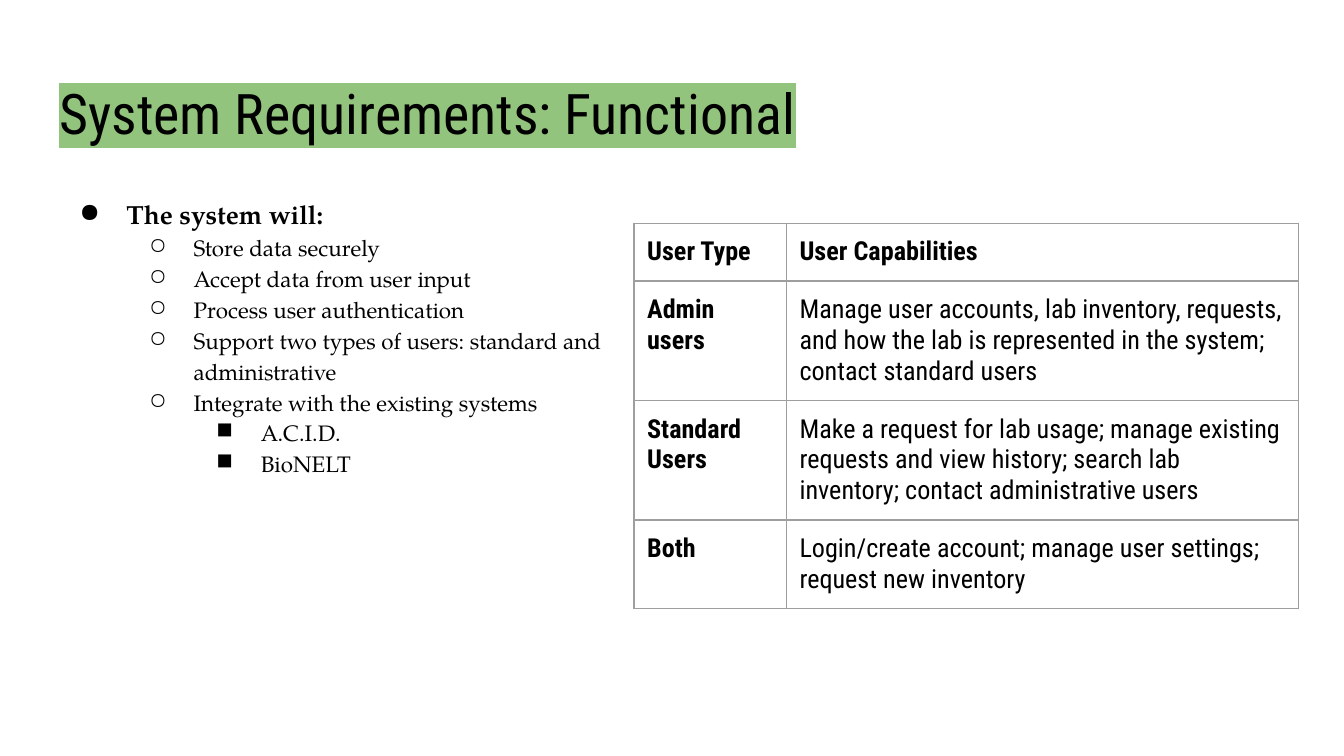
from lxml.etree import SubElement
from pptx import Presentation
from pptx.dml.color import RGBColor
from pptx.enum.text import MSO_ANCHOR, MSO_AUTO_SIZE, PP_ALIGN
from pptx.oxml.ns import qn
from pptx.util import Cm, Pt

SANS, SERIF = "Roboto Condensed", "TeX Gyre Pagella"
BLACK, GREEN, GRAY, WHITE = "000000", "93C47D", "9E9E9E", "FFFFFF"
BULLETS = "●○■"
REQUIREMENTS = [
    (0, "The system will:"),
    (1, "Store data securely"),
    (1, "Accept data from user input"),
    (1, "Process user authentication"),
    (1, "Support two types of users: standard and administrative"),
    (1, "Integrate with the existing systems"),
    (2, "A.C.I.D."),
    (2, "BioNELT"),
]
CAPABILITIES = [
    ("User Type", "User Capabilities"),
    ("Admin users", "Manage user accounts, lab inventory, requests, and how the lab "
     "is represented in the system; contact standard users"),
    ("Standard Users", "Make a request for lab usage; manage existing requests and view "
     "history; search lab inventory; contact administrative users"),
    ("Both", "Login/create account; manage user settings; request new inventory"),
]


def rgb(value):
    return RGBColor.from_string(value)


def solid(parent, value):
    fill = SubElement(parent, qn("a:solidFill"))
    SubElement(fill, qn("a:srgbClr"), val=value)


class Deck:
    """Holds the text style and the current slide."""

    def __init__(self, prs):
        self.color = BLACK
        self.inset = Cm(0.25)
        self.s = prs.slides.add_slide(prs.slide_layouts[5])
        self.s.background.fill.solid()
        self.s.background.fill.fore_color.rgb = rgb(WHITE)

    def run(self, p, text, font, size, bold=False):
        r = p.add_run()
        r.text = text
        r.font.name, r.font.size, r.font.bold = font, Pt(size), bold
        r.font.color.rgb = rgb(self.color)
        return r

    def frame(self, tf):
        tf.word_wrap = True
        tf.auto_size = MSO_AUTO_SIZE.NONE
        tf.vertical_anchor = MSO_ANCHOR.TOP
        tf.margin_left = tf.margin_right = self.inset
        tf.margin_top = tf.margin_bottom = self.inset
        return tf

    def title(self, text, x, y, w, h, highlight):
        sp = self.s.shapes.title
        sp.left, sp.top, sp.width, sp.height = Cm(x), Cm(y), Cm(w), Cm(h)
        p = self.frame(sp.text_frame).paragraphs[0]
        p.alignment = PP_ALIGN.LEFT
        rPr = self.run(p, text, SANS, 30).font._element
        mark = SubElement(rPr, qn("a:highlight"))
        SubElement(mark, qn("a:srgbClr"), val=highlight)
        rPr.find(qn("a:latin")).addprevious(mark)

    def bullets(self, items, x, y, w, h):
        sp = self.s.shapes.add_textbox(Cm(x), Cm(y), Cm(w), Cm(h))
        tf = self.frame(sp.text_frame)
        for i, (level, text) in enumerate(items):
            p = tf.add_paragraph() if i else tf.paragraphs[0]
            p.level = level
            p.line_spacing = 1.15
            pPr = p._p.get_or_add_pPr()
            pPr.set("marL", str(Cm(1.27 * (level + 1))))
            pPr.set("indent", str(-Cm(0.84 if level else 0.89)))
            color = SubElement(pPr, qn("a:buClr"))
            SubElement(color, qn("a:srgbClr"), val=self.color)
            SubElement(pPr, qn("a:buChar"), char=BULLETS[level])
            self.run(p, text, SERIF, 12 if level else 14, level == 0)

    def table(self, rows, x, y, widths, heights):
        shape = self.s.shapes.add_table(len(rows), len(widths), Cm(x), Cm(y),
                                        Cm(sum(widths)), Cm(sum(heights)))
        table = shape.table
        table.first_row = table.horz_banding = False
        for column, width in zip(table.columns, widths):
            column.width = Cm(width)
        for row, height, texts in zip(table.rows, heights, rows):
            row.height = Cm(height)
            for i, (cell, text) in enumerate(zip(row.cells, texts)):
                self.cell(cell, text, i == 0 or texts is rows[0])

    def cell(self, cell, text, bold):
        cell.margin_left = cell.margin_right = self.inset
        cell.margin_top = cell.margin_bottom = self.inset
        self.run(cell.text_frame.paragraphs[0], text, SANS, 14, bold)
        tcPr = cell._tc.get_or_add_tcPr()
        for side in "LRTB":
            solid(SubElement(tcPr, qn(f"a:ln{side}"), w=str(Pt(0.75))), GRAY)
        cell.fill.background()


def main():
    prs = Presentation()
    prs.slide_width, prs.slide_height = Cm(25.4), Cm(14.29)
    deck = Deck(prs)
    deck.title("System Requirements: Functional", 0.87, 1.24, 23.67, 1.6, GREEN)
    deck.bullets(REQUIREMENTS, 0.87, 3.42, 11.1, 9.27)
    deck.table(CAPABILITIES, 11.98, 4.22, [2.88, 9.68], [1.09, 2.26, 2.26, 1.67])
    prs.save("out.pptx")


if __name__ == "__main__":
    main()
